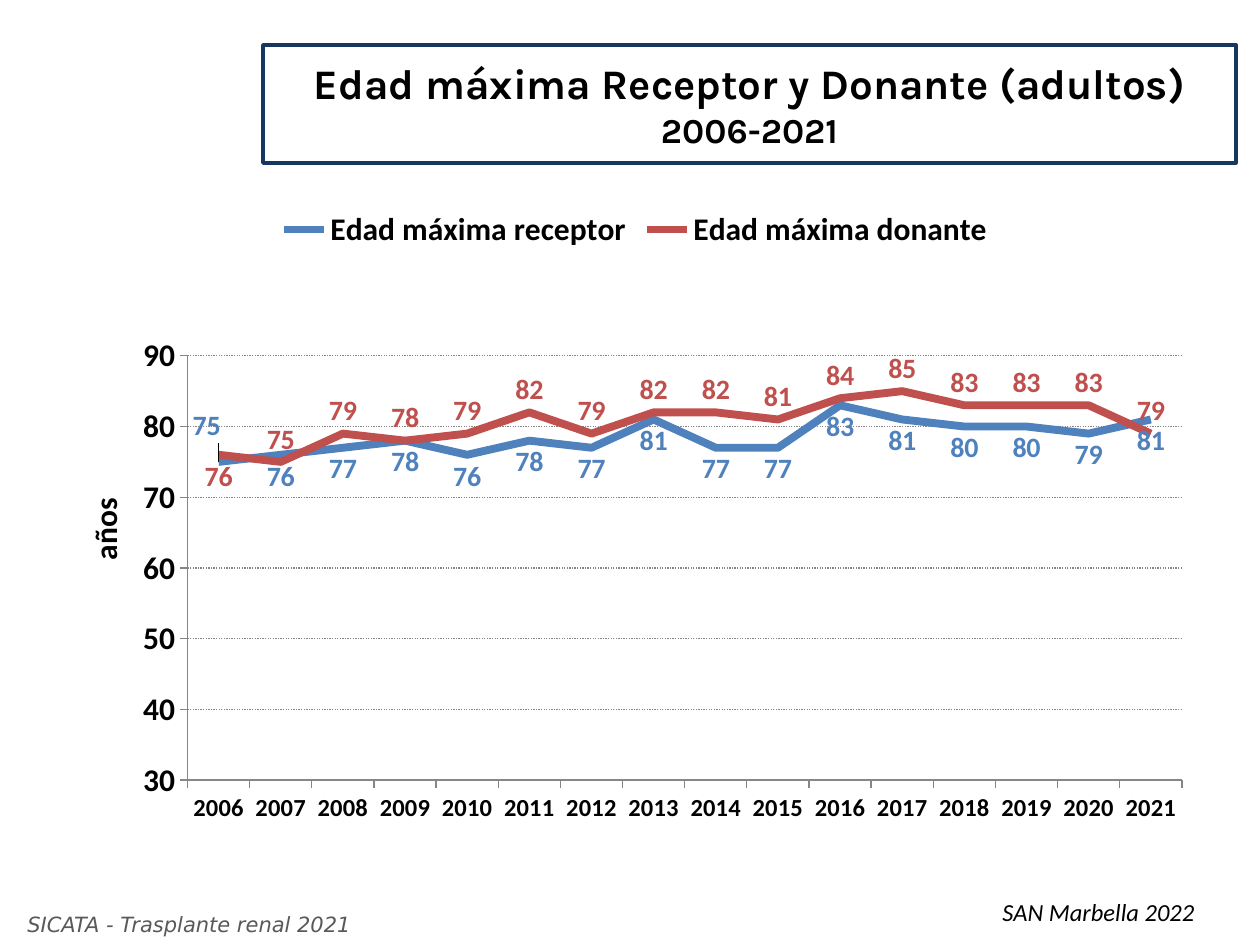
import pptx
import pptx.chart.data
import pptx.dml.color
import pptx.enum.chart
import pptx.enum.dml
import pptx.enum.text
import pptx.oxml
import pptx.oxml.ns
import pptx.util

# Content
TITLE = [("Edad máxima Receptor y Donante (adultos)", 24), ("2006-2021", 20)]
YEARS = [str(year) for year in range(2006, 2022)]
POS = pptx.enum.chart.XL_LABEL_POSITION
SERIES = [
    {"name": "Edad máxima receptor", "color": "4F81BD",
     "pos": POS.BELOW, "first": POS.ABOVE, "shift": (-0.01, -0.02),
     "vals": [75, 76, 77, 78, 76, 78, 77, 81, 77, 77, 83, 81, 80, 80, 79, 81]},
    {"name": "Edad máxima donante", "color": "C0504D",
     "pos": POS.ABOVE, "first": POS.BELOW, "shift": None,
     "vals": [76, 75, 79, 78, 79, 82, 79, 82, 82, 81, 84, 85, 83, 83, 83, 79]},
]
# text, box in px, rotation, wrap, font
NOTES = [
    ("años", (57, 495, 100, 55), 270, False,
     {"name": "Calibri", "size": 18, "bold": True, "color": "000000"}),
    ("SICATA - Trasplante renal 2021", (15, 905, 367, 38), 0, True,
     {"name": "DejaVu Sans", "size": 12, "italic": True, "color": "595959"}),
    ("SAN Marbella 2022", (990, 891, 248, 43), 0, True,
     {"name": "Calibri", "size": 14, "italic": True, "color": "000000"}),
]
TITLE_BOX = (263, 45, 973, 118)
CHART_BOX = (35, 195, 1201, 662)
PLOT = {"layoutTarget": "inner", "xMode": "edge", "yMode": "edge",
        "x": 0.127, "y": 0.243, "w": 0.828, "h": 0.641}
SCALE = 914400 / 126


def px(*nums):
    return [round(num * SCALE) for num in nums]


def rgb(code):
    return pptx.dml.color.RGBColor.from_string(code)


def style(font, form):
    for key, val in form.items():
        if key == "color":
            font.color.rgb = rgb(val)
        else:
            setattr(font, key, pptx.util.Pt(val) if key == "size" else val)


def layout(form):
    tags = "".join(f'<c:{key} val="{val}"/>' for key, val in form.items())
    space = pptx.oxml.ns.nsdecls("c")
    return pptx.oxml.parse_xml(
        f"<c:layout {space}><c:manualLayout>{tags}</c:manualLayout></c:layout>")


deck = pptx.Presentation()
deck.slide_width, deck.slide_height = px(1260, 945)
slide = deck.slides.add_slide(deck.slide_layouts[5])

# Title in a rounded frame
title = slide.shapes.title
title.left, title.top, title.width, title.height = px(*TITLE_BOX)
title.element.spPr.append(pptx.oxml.parse_xml(
    f'<a:prstGeom {pptx.oxml.ns.nsdecls("a")} prst="roundRect"><a:avLst/></a:prstGeom>'))
title.fill.solid()
title.fill.fore_color.rgb = rgb("FFFFFF")
title.line.color.rgb = rgb("17375E")
title.line.width = pptx.util.Pt(2)
frame = title.text_frame
frame.vertical_anchor = pptx.enum.text.MSO_ANCHOR.MIDDLE
frame.text = "\n".join(text for text, size in TITLE)
for para, (text, size) in zip(frame.paragraphs, TITLE):
    para.alignment = pptx.enum.text.PP_ALIGN.CENTER
    style(para.runs[0].font, {"name": "Karla", "size": size, "bold": True, "color": "000000"})

# Line chart
data = pptx.chart.data.CategoryChartData()
data.categories = YEARS
for row in SERIES:
    data.add_series(row["name"], row["vals"])
chart = slide.shapes.add_chart(
    pptx.enum.chart.XL_CHART_TYPE.LINE, *px(*CHART_BOX), data).chart
chart.has_title = False
style(chart.font, {"name": "Calibri", "size": 18, "color": "000000"})
chart.has_legend = True
chart.legend.position = pptx.enum.chart.XL_LEGEND_POSITION.TOP
chart.legend.include_in_layout = False
style(chart.legend.font, {"size": 18, "bold": True})

area = chart.element.chart.plotArea
for old in area.findall(pptx.oxml.ns.qn("c:layout")):
    area.remove(old)
area.insert(0, layout(PLOT))

# Axes
value = chart.value_axis
for key, val in {"minimum_scale": 30, "maximum_scale": 90, "major_unit": 10}.items():
    setattr(value, key, val)
for axis, size in ((chart.category_axis, 14), (value, 18)):
    style(axis.tick_labels.font, {"size": size, "bold": True})
    axis.major_tick_mark = pptx.enum.chart.XL_TICK_MARK.OUTSIDE
    axis.format.line.color.rgb = rgb("868686")
    axis.format.line.width = pptx.util.Pt(0.75)
grid = value.major_gridlines.format.line
grid.color.rgb = rgb("868686")
grid.width = pptx.util.Pt(0.75)
grid.dash_style = pptx.enum.dml.MSO_LINE.ROUND_DOT

# Lines and their labels
chart.plots[0].vary_by_categories = False
for line, row in zip(chart.plots[0].series, SERIES):
    line.smooth = False
    line.format.line.color.rgb = rgb(row["color"])
    line.format.line.width = pptx.util.Pt(4.5)
    labels = line.data_labels
    labels.show_value = True
    first = line.points[0].data_label
    for label, pos in ((labels, row["pos"]), (first, row["first"])):
        label.position = pos
        style(label.font, {"size": 16, "bold": True, "color": row["color"]})
    if row["shift"]:
        dx, dy = row["shift"]
        mark = labels._element.find(pptx.oxml.ns.qn("c:dLbl"))
        mark.insert(1, layout({"x": dx, "y": dy}))

# Axis caption and footers
for text, box, turn, wrap, form in NOTES:
    note = slide.shapes.add_textbox(*px(*box))
    note.rotation = turn
    note.text_frame.word_wrap = wrap
    note.text_frame.text = text
    style(note.text_frame.paragraphs[0].runs[0].font, form)

deck.save("out.pptx")
